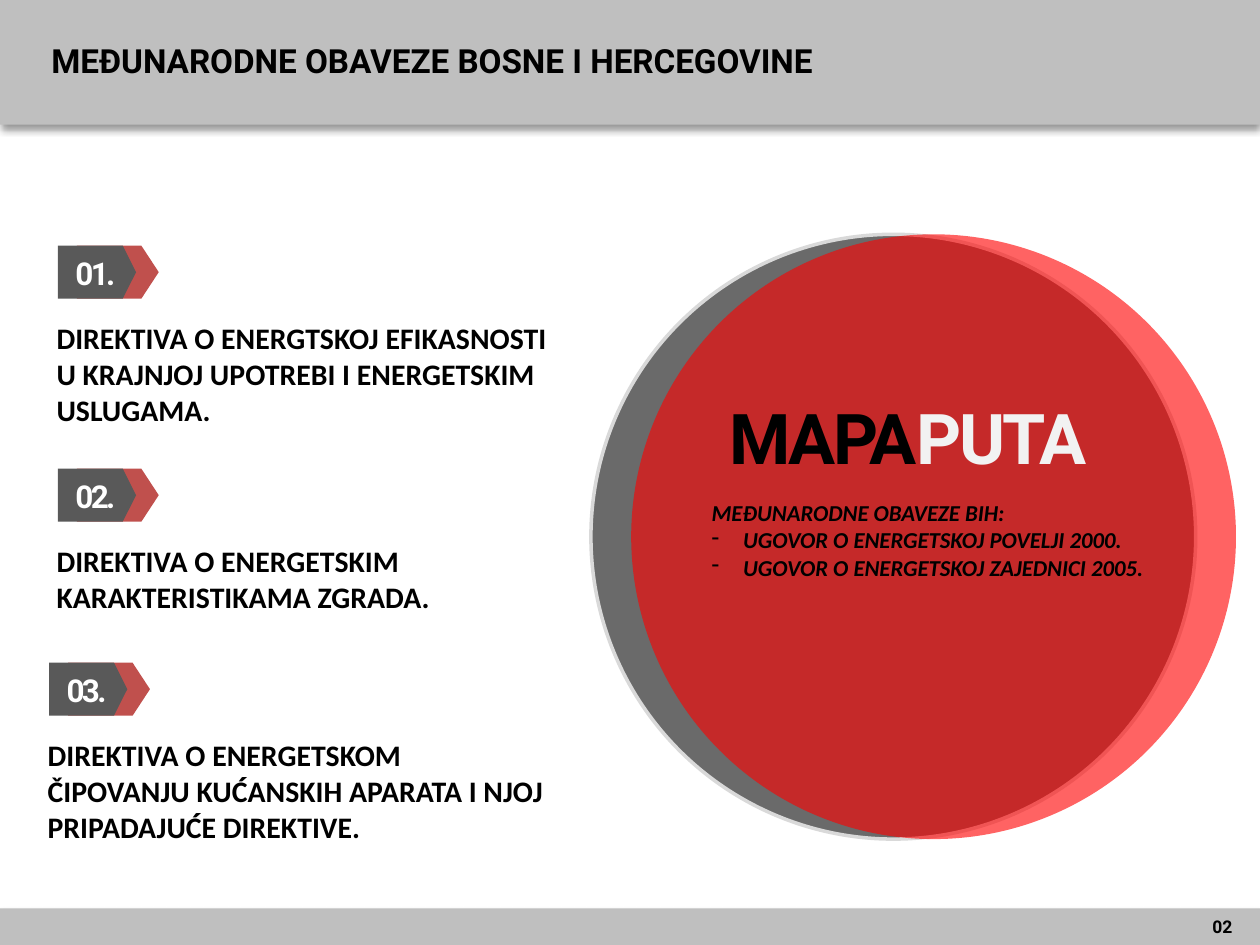
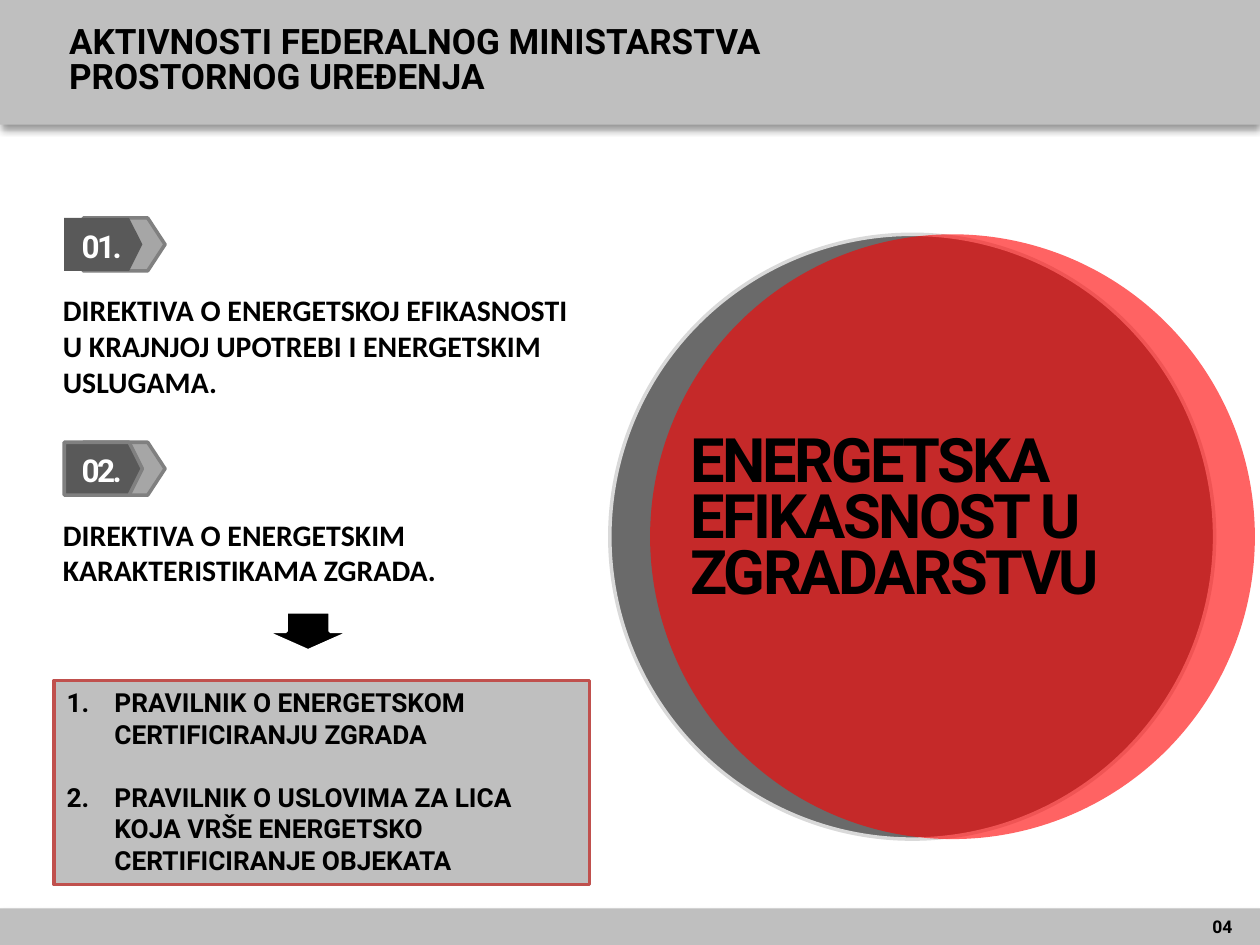
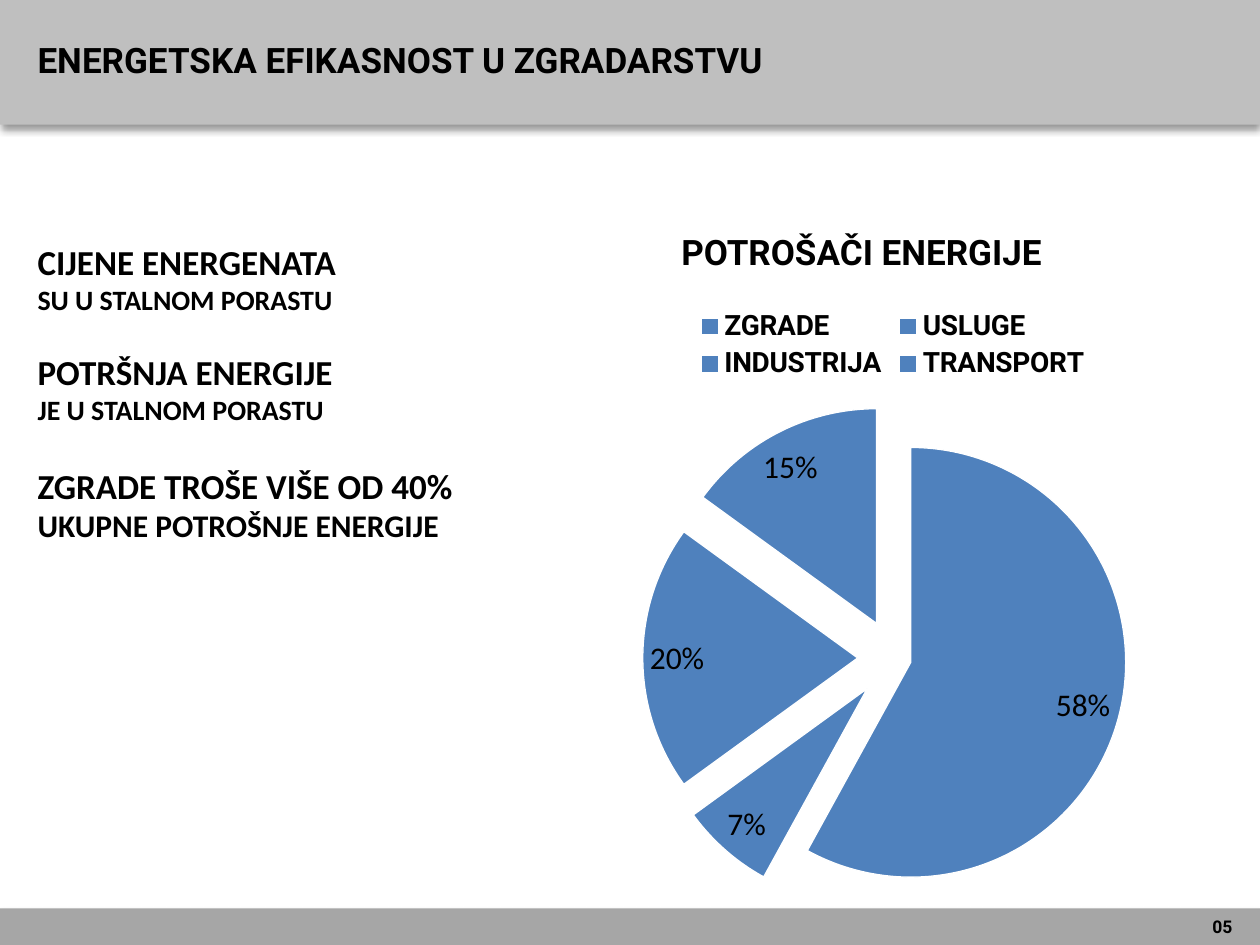
from dataclasses import dataclass, replace

from lxml.etree import SubElement
from pptx import Presentation
from pptx.chart.data import CategoryChartData
from pptx.dml.color import RGBColor
from pptx.enum.chart import XL_CHART_TYPE as ChartType, XL_LEGEND_POSITION as LegendPosition
from pptx.enum.shapes import MSO_SHAPE as Preset
from pptx.enum.text import MSO_ANCHOR as Anchor, PP_ALIGN as Align
from pptx.oxml.ns import qn
from pptx.util import Inches, Pt


@dataclass(frozen=True)
class TextStyle:
    font: str
    size: float
    color: str = "000000"
    italic: bool = False
    tracking: float = 0


class Theme:
    band = "BFBFBF"
    band_dark = "A6A6A6"
    black = "000000"
    white = "FFFFFF"
    pale = "F2F2F2"
    disc_back = "0D0D0D"
    disc_front = "FF0000"
    disc_outline = "D9D9D9"
    disc_opacity = 61
    accent = "C0504D"
    badge = "595959"
    badge_gray = "A6A6A6"
    badge_outline = "808080"
    slice = "4F81BD"
    title = TextStyle("Roboto", 20)
    page = TextStyle("Roboto", 10)
    number = TextStyle("Roboto", 18, "FFFFFF", tracking=-1.5)
    directive = TextStyle("Calibri", 17)
    fact = TextStyle("Calibri", 20)
    treaty = TextStyle("Calibri", 13, italic=True)
    rule = TextStyle("Roboto", 15)
    disc_title = TextStyle("Roboto", 40, tracking=-1.5)
    disc_lines = TextStyle("Roboto", 35, tracking=-1.5)


def rgb(color):
    return RGBColor.from_string(color)


def add_shape(slide, preset, box, fill, line=None, adjustment=None):
    shape = slide.shapes.add_shape(preset, *map(Inches, box))
    shape.shadow.inherit = False
    shape.fill.solid()
    shape.fill.fore_color.rgb = rgb(fill)
    if line:
        shape.line.color.rgb = rgb(line)
        shape.line.width = Pt(2)
    else:
        shape.line.fill.background()
    if adjustment is not None:
        shape.adjustments[0] = adjustment
    return shape


def format_run(run, style):
    run.font.name = style.font
    run.font.size = Pt(style.size)
    run.font.bold = True
    run.font.italic = style.italic
    run.font.color.rgb = rgb(style.color)
    if style.tracking:
        run.font._element.set("spc", str(round(style.tracking * 100)))


def fill_text(shape, lines, style, align=Align.LEFT, anchor=Anchor.TOP, spacing=None):
    text_frame = shape.text_frame
    text_frame.word_wrap = True
    text_frame.vertical_anchor = anchor
    text_frame.text = "\n".join(lines)
    for paragraph in text_frame.paragraphs:
        paragraph.alignment = align
        if spacing:
            paragraph.line_spacing = Pt(spacing)
        for run in paragraph.runs:
            format_run(run, style)
    return text_frame.paragraphs


def add_text(slide, box, lines, style, **layout):
    return fill_text(slide.shapes.add_textbox(*map(Inches, box)), lines, style, **layout)


def add_bullet(paragraph, indent, tag, **attributes):
    properties = paragraph._p.get_or_add_pPr()
    properties.set("marL", str(Inches(indent)))
    properties.set("indent", str(-Inches(indent)))
    SubElement(properties, qn(tag), attributes)


def add_band(slide, top, height, color):
    band = add_shape(slide, Preset.RECTANGLE, (0, top, 10, height), color)
    effects = band._element.spPr.find(qn("a:effectLst"))
    shadow = SubElement(effects, qn("a:outerShdw"), blurRad=str(Pt(4)), dist=str(Pt(3)),
                        dir="5400000", algn="t", rotWithShape="0")
    shadow_color = SubElement(shadow, qn("a:srgbClr"), val=Theme.black)
    SubElement(shadow_color, qn("a:alpha"), val="40000")


def add_frame(slide, title_lines, page, title_box, title_size=20, footer_color=Theme.band):
    add_band(slide, 0, 0.99, Theme.band)
    add_band(slide, 7.21, 0.29, footer_color)
    add_text(slide, title_box, title_lines, replace(Theme.title, size=title_size), spacing=20)
    add_text(slide, (7.28, 7.21, 2.6, 0.29), [page], Theme.page, align=Align.RIGHT,
             anchor=Anchor.MIDDLE)


def add_discs(slide, left, top):
    discs = ((0, Theme.disc_back, Theme.disc_outline), (0.32, Theme.disc_front, None))
    for offset, color, outline in discs:
        disc = add_shape(slide, Preset.OVAL, (left + offset, top, 4.8, 4.8), color, outline)
        color_element = disc._element.spPr.find(qn("a:solidFill"))[0]
        SubElement(color_element, qn("a:alpha"), val=str(Theme.disc_opacity * 1000))


def add_directive(slide, box, number, text, tip=Theme.accent, tip_line=None, body_line=None):
    left, top, width, height = box
    badge_left = left + 0.11
    add_shape(slide, Preset.PENTAGON, (badge_left + 0.15, top, 0.65, 0.42), tip, tip_line, 0.328)
    add_shape(slide, Preset.PENTAGON, (badge_left, top, 0.62, 0.42), Theme.badge, body_line, 0.251)
    add_text(slide, (badge_left + 0.04, top + 0.02, 0.57, 0.43), [number], Theme.number)
    add_text(slide, (left, top + 0.54, width, height - 0.54), [text], Theme.directive)


def add_road_map(slide, left, top):
    title, = add_text(slide, (left, top, 4.57, 0.8), ["MAPA"], Theme.disc_title,
                      align=Align.CENTER)
    run = title.add_run()
    run.text = "PUTA"
    format_run(run, replace(Theme.disc_title, color=Theme.pale))
    treaties = add_text(slide, (left + 0.63, top + 0.83, 3.83, 0.76), [
        "MEĐUNARODNE OBAVEZE BIH:",
        "UGOVOR O ENERGETSKOJ POVELJI 2000.",
        "UGOVOR O ENERGETSKOJ ZAJEDNICI 2005.",
    ], Theme.treaty)
    for paragraph in treaties[1:]:
        add_bullet(paragraph, 0.25, "a:buChar", char="-")


def add_rulebooks(slide, box):
    left, top, width, height = box
    panel = add_shape(slide, Preset.RECTANGLE, box, Theme.band, Theme.accent)
    rules = fill_text(panel, [
        "PRAVILNIK O ENERGETSKOM CERTIFICIRANJU ZGRADA",
        "PRAVILNIK O USLOVIMA ZA LICA KOJA VRŠE ENERGETSKO CERTIFICIRANJE OBJEKATA",
    ], Theme.rule)
    rules[1].space_before = Pt(18)
    for paragraph in rules:
        add_bullet(paragraph, 0.38, "a:buAutoNum", type="arabicPeriod")
    arrow = add_shape(slide, Preset.RIGHT_ARROW, (left + 1.86, top - 0.74, 0.31, 0.7),
                      Theme.black, Theme.white)
    arrow.rotation = 90


def add_facts(slide, box, facts):
    lines = [line for heading, detail, size, gap in facts for line in (heading, detail)]
    paragraphs = add_text(slide, box, lines, Theme.fact)
    for index, (heading, detail, size, gap) in enumerate(facts):
        if gap:
            paragraphs[2 * index].space_before = Pt(gap)
        paragraphs[2 * index + 1].runs[0].font.size = Pt(size)


def add_consumer_chart(slide, box, shares, explosions):
    data = CategoryChartData()
    data.categories = list(shares)
    data.add_series("Series 1", list(shares.values()))
    chart = slide.shapes.add_chart(ChartType.PIE, *map(Inches, box), data).chart
    chart.has_title = False
    chart.font.name = "Calibri"
    chart.font.size = Pt(18)
    chart.font.color.rgb = rgb(Theme.black)
    chart.has_legend = True
    legend = chart.legend
    legend.position = LegendPosition.TOP
    legend.include_in_layout = False
    legend.font.name = "Roboto"
    legend.font.size = Pt(16)
    legend.font.bold = True
    legend.font.color.rgb = rgb(Theme.black)
    plot = chart.plots[0]
    plot.vary_by_categories = False
    plot.has_data_labels = True
    plot.data_labels.show_percentage = True
    plot.data_labels.show_value = False
    series = plot.series[0]
    series.format.fill.solid()
    series.format.fill.fore_color.rgb = rgb(Theme.slice)
    for index, explosion in enumerate(explosions):
        point_format = series.points[index].format
        point_format.fill.solid()
        point_format.fill.fore_color.rgb = rgb(Theme.slice)
        point_format.line.color.rgb = rgb(Theme.white)
        point_format.line.width = Pt(0.75)
        point = series._element.findall(qn("c:dPt"))[index]
        explosion_element = SubElement(point, qn("c:explosion"), val=str(explosion))
        point.find(qn("c:spPr")).addprevious(explosion_element)


def build_obligations(slide):
    add_discs(slide, 4.69, 1.86)
    add_road_map(slide, 4.92, 3.08)
    add_directive(slide, (0.35, 1.95, 4.25, 1.5), "01.",
                  "DIREKTIVA O ENERGTSKOJ EFIKASNOSTI U KRAJNJOJ UPOTREBI I ENERGETSKIM USLUGAMA.")
    add_directive(slide, (0.35, 3.72, 4.25, 1.22), "02.",
                  "DIREKTIVA O ENERGETSKIM KARAKTERISTIKAMA ZGRADA.")
    add_directive(slide, (0.28, 5.26, 4.17, 1.5), "03.",
                  "DIREKTIVA O ENERGETSKOM ČIPOVANJU KUĆANSKIH APARATA I NJOJ "
                  "PRIPADAJUĆE DIREKTIVE.")
    add_frame(slide, ["MEĐUNARODNE OBAVEZE BOSNE I HERCEGOVINE"], "02",
              (0.31, 0.31, 9.69, 0.38), title_size=19)


def build_activities(slide):
    add_discs(slide, 4.84, 1.86)
    disc_lines = add_text(slide, (5.38, 3.53, 4.27, 1.95),
                          ["ENERGETSKA", "EFIKASNOST U", "ZGRADARSTVU"],
                          Theme.disc_lines, spacing=25)
    for paragraph in disc_lines[1:]:
        paragraph.space_before = Pt(7)
    gray = {"tip": Theme.badge_gray, "tip_line": Theme.badge_outline}
    add_directive(slide, (0.4, 1.73, 4.25, 1.5), "01.",
                  "DIREKTIVA O ENERGETSKOJ EFIKASNOSTI U KRAJNJOJ UPOTREBI I ENERGETSKIM "
                  "USLUGAMA.", **gray)
    add_directive(slide, (0.4, 3.51, 4.25, 1.22), "02.",
                  "DIREKTIVA O ENERGETSKIM KARAKTERISTIKAMA ZGRADA.",
                  body_line=Theme.badge_outline, **gray)
    add_rulebooks(slide, (0.43, 5.4, 4.25, 1.62))
    add_frame(slide, ["AKTIVNOSTI FEDERALNOG MINISTARSTVA", "PROSTORNOG UREĐENJA"], "04",
              (0.45, 0.16, 9.55, 0.66))


def build_consumption(slide):
    shares = {"ZGRADE": 58, "USLUGE": 7, "INDUSTRIJA": 20, "TRANSPORT": 15}
    add_consumer_chart(slide, (4.17, 2.35, 5.83, 5.15), shares, (8, 19, 17, 18))
    add_facts(slide, (0.2, 1.86, 8.07, 2.52), [
        ("CIJENE ENERGENATA", "SU U STALNOM PORASTU", 16, 0),
        ("POTRŠNJA ENERGIJE", "JE U STALNOM PORASTU", 16, 19.5),
        ("ZGRADE TROŠE VIŠE OD 40%", "UKUPNE POTROŠNJE ENERGIJE", 18, 22),
    ])
    add_text(slide, (5.31, 1.78, 4.33, 0.44), ["POTROŠAČI ENERGIJE"], Theme.title)
    add_frame(slide, ["ENERGETSKA EFIKASNOST U ZGRADARSTVU"], "05", (0.2, 0.31, 9.8, 0.38),
              footer_color=Theme.band_dark)


def main():
    presentation = Presentation()
    presentation.slide_width = Inches(10)
    presentation.slide_height = Inches(7.5)
    for build in (build_obligations, build_activities, build_consumption):
        build(presentation.slides.add_slide(presentation.slide_layouts[6]))
    presentation.save("out.pptx")


if __name__ == "__main__":
    main()
